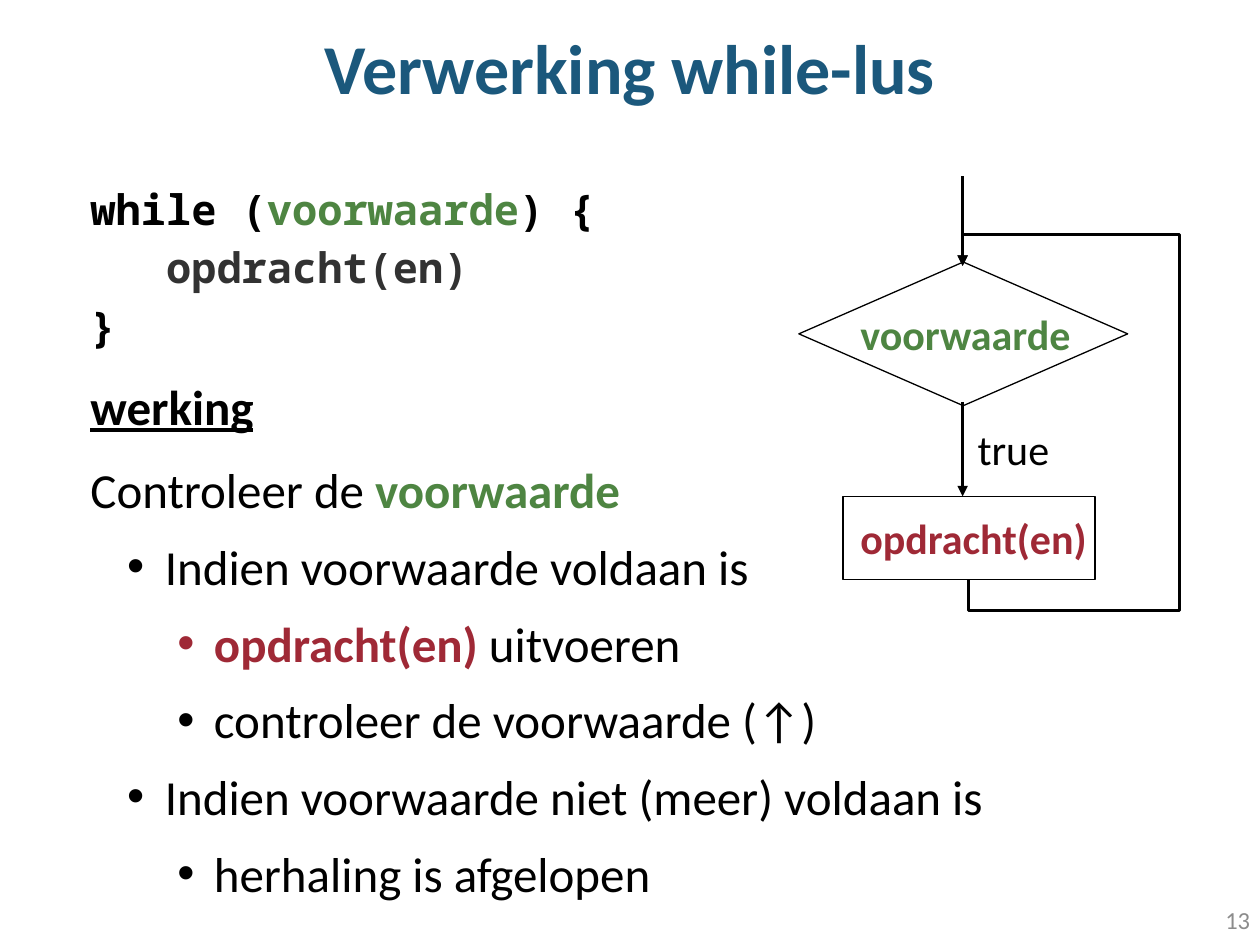
from pptx import Presentation, util as u
from pptx.dml.color import RGBColor
from pptx.enum import shapes, text
from pptx.oxml import parse_xml
from pptx.oxml.ns import nsdecls, qn

BLUE = RGBColor(0x1B, 0x58, 0x7C)
GREEN = RGBColor(0x4E, 0x85, 0x42)
RED = RGBColor(0x9F, 0x29, 0x36)
BLACK = RGBColor(0, 0, 0)
DARK = RGBColor(0x32, 0x32, 0x32)
GREY = RGBColor(0x8C, 0x8C, 0x8C)
WHITE = RGBColor(255, 255, 255)
MONO = "Noto Sans Mono"


def add_element(parent, tag, **attributes):
    names = " ".join(f'{key}="{value}"' for key, value in attributes.items())
    element = parse_xml(f"<a:{tag} {nsdecls('a')} {names}/>")
    parent.append(element)
    return element


class SlideBuilder:
    font = "Calibri"

    def __init__(self, presentation):
        self.slide = presentation.slides.add_slide(presentation.slide_layouts[5])

    def run(self, paragraph, words, size, color=BLACK, bold=False, font=None, underline=None):
        run = paragraph.add_run()
        run.text = words
        run.font.size = u.Pt(size)
        run.font.name = font or self.font
        run.font.bold = bold
        run.font.underline = underline
        run.font.color.rgb = color

    def title(self, words, left, top, width, height):
        title = self.slide.shapes.title
        title.left, title.top = u.Inches(left), u.Inches(top)
        title.width, title.height = u.Inches(width), u.Inches(height)
        title.text_frame.vertical_anchor = text.MSO_ANCHOR.MIDDLE
        paragraph = title.text_frame.paragraphs[0]
        paragraph.alignment = text.PP_ALIGN.CENTER
        paragraph.line_spacing = 0.9
        self.run(paragraph, words, 40, BLUE, bold=True)

    def text_box(self, left, top, width, height):
        box = self.slide.shapes.add_textbox(*map(u.Inches, (left, top, width, height)))
        box.text_frame.word_wrap = True
        return box.text_frame

    def label(self, words, left, top, width, color=BLACK, bold=False):
        frame = self.text_box(left, top, width, 0.5)
        self.run(frame.paragraphs[0], words, 24, color, bold)

    def paragraph(self, frame, spacing, before, margin, indent, level=0):
        """Add a paragraph; levels above 0 get a bullet."""
        first = frame.paragraphs[0]
        paragraph = frame.add_paragraph() if first.runs else first
        paragraph.level = level
        paragraph.line_spacing = spacing
        paragraph.space_before = u.Pt(before)
        properties = paragraph._p.get_or_add_pPr()
        properties.set("marL", str(u.Inches(margin)))
        properties.set("indent", str(u.Inches(indent)))
        if level:
            add_element(properties, "buFont", typeface="Arial")
            add_element(properties, "buChar", char="•")
        return paragraph

    def box(self, kind, left, top, width, height):
        shape = self.slide.shapes.add_shape(kind, *map(u.Inches, (left, top, width, height)))
        shape.shadow.inherit = False
        shape.fill.solid()
        shape.fill.fore_color.rgb = WHITE
        shape.line.color.rgb = BLACK
        shape.line.width = u.Pt(0.75)
        return shape

    def arrow(self, start, end, weight=2, kind=shapes.MSO_CONNECTOR.STRAIGHT):
        connector = self.slide.shapes.add_connector(kind, *map(u.Inches, (*start, *end)))
        connector.line.color.rgb = BLACK
        connector.line.width = u.Pt(weight)
        add_element(connector.line._get_or_add_ln(), "tailEnd", type="triangle")
        add_element(connector._element.spPr, "effectLst")
        return connector

    def loop_arrow(self, source, start, end, right, clearance):
        """Lead from below source, round the right side, back to end from above."""
        connector = self.arrow(start, end, 1.75, shapes.MSO_CONNECTOR.ELBOW)
        connector.begin_connect(source, 2)
        # The five-part elbow runs sideways, so its frame is turned a quarter.
        length, offset = start[1] - end[1], start[0] - end[0]
        connector.left = u.Inches((start[0] + end[0] - length) / 2)
        connector.top = u.Inches((start[1] + end[1] - offset) / 2)
        connector.width, connector.height = u.Inches(length), u.Inches(offset)
        transform = connector._element.spPr.find(qn("a:xfrm"))
        transform.attrib.clear()
        transform.set("rot", "5400000")
        transform.set("flipH", "1")
        geometry = connector._element.spPr.find(qn("a:prstGeom"))
        geometry.set("prst", "bentConnector5")
        for child in list(geometry):
            geometry.remove(child)
        guides = add_element(geometry, "avLst")
        ratios = (-clearance / length, (start[0] - right) / offset, 1 + clearance / length)
        for number, ratio in enumerate(ratios, 1):
            add_element(guides, "gd", name=f"adj{number}", fmla=f"val {round(ratio * 100000)}")


def add_explanation(builder):
    frame = builder.text_box(0.62, 1.45, 8.33, 5.25)
    code_lines = [
        (0.19, -0.19, [("while (", BLACK), ("voorwaarde", GREEN), (") {", BLACK)]),
        (0.6, 0, [("opdracht(en)", DARK)]),
        (0.19, -0.19, [("}", BLACK)]),
    ]
    for margin, indent, parts in code_lines:
        paragraph = builder.paragraph(frame, 0.9, 7.5, margin, indent)
        for words, color in parts:
            builder.run(paragraph, words, 24, color, True, MONO)

    heading = builder.paragraph(frame, 0.9, 18, 0.19, -0.19)
    builder.run(heading, "werking", 28, bold=True, underline=True)

    indents = [(7.5, 0.19, -0.19), (3.8, 0.59, -0.3), (3.8, 0.98, -0.29)]
    steps = [
        (0, [("Controleer de ", BLACK), ("voorwaarde", GREEN)]),
        (1, [("Indien voorwaarde voldaan is", BLACK)]),
        (2, [("opdracht(en) ", RED), ("uitvoeren", BLACK)]),
        (2, [("controleer de voorwaarde (↑)", BLACK)]),
        (1, [("Indien voorwaarde niet (meer) voldaan is", BLACK)]),
        (2, [("herhaling is afgelopen", BLACK)]),
    ]
    for level, parts in steps:
        paragraph = builder.paragraph(frame, u.Pt(40), *indents[level], level)
        for words, color in parts:
            builder.run(paragraph, words, 28, color, bold=color != BLACK)


def add_flowchart(builder):
    flow_x = 7.64
    builder.box(shapes.MSO_SHAPE.FLOWCHART_DECISION, 6.34, 2.08, 2.61, 1.14)
    body = builder.box(shapes.MSO_SHAPE.RECTANGLE, 6.69, 3.94, 2, 0.66)
    builder.label("voorwaarde", 6.73, 2.4, 2, GREEN, True)
    builder.arrow((flow_x, 3.19), (flow_x, 3.94))
    builder.label("true", 7.66, 3.31, 0.92)
    builder.loop_arrow(body, (7.69, 4.6), (flow_x, 2.11), right=9.36, clearance=0.25)
    builder.arrow((flow_x, 1.4), (flow_x, 2.11))
    builder.label("opdracht(en)", 6.73, 4.02, 2, RED, True)


def main():
    presentation = Presentation()
    presentation.slide_width, presentation.slide_height = u.Inches(10), u.Inches(7.5)
    builder = SlideBuilder(presentation)
    builder.title("Verwerking while-lus", 0, 0, 10, 1.14)
    add_explanation(builder)
    number = builder.text_box(7.77, 7.1, 2.25, 0.4)
    number.vertical_anchor = text.MSO_ANCHOR.MIDDLE
    number.paragraphs[0].alignment = text.PP_ALIGN.RIGHT
    builder.run(number.paragraphs[0], "13", 14, GREY)
    add_flowchart(builder)
    presentation.save("out.pptx")


if __name__ == "__main__":
    main()
